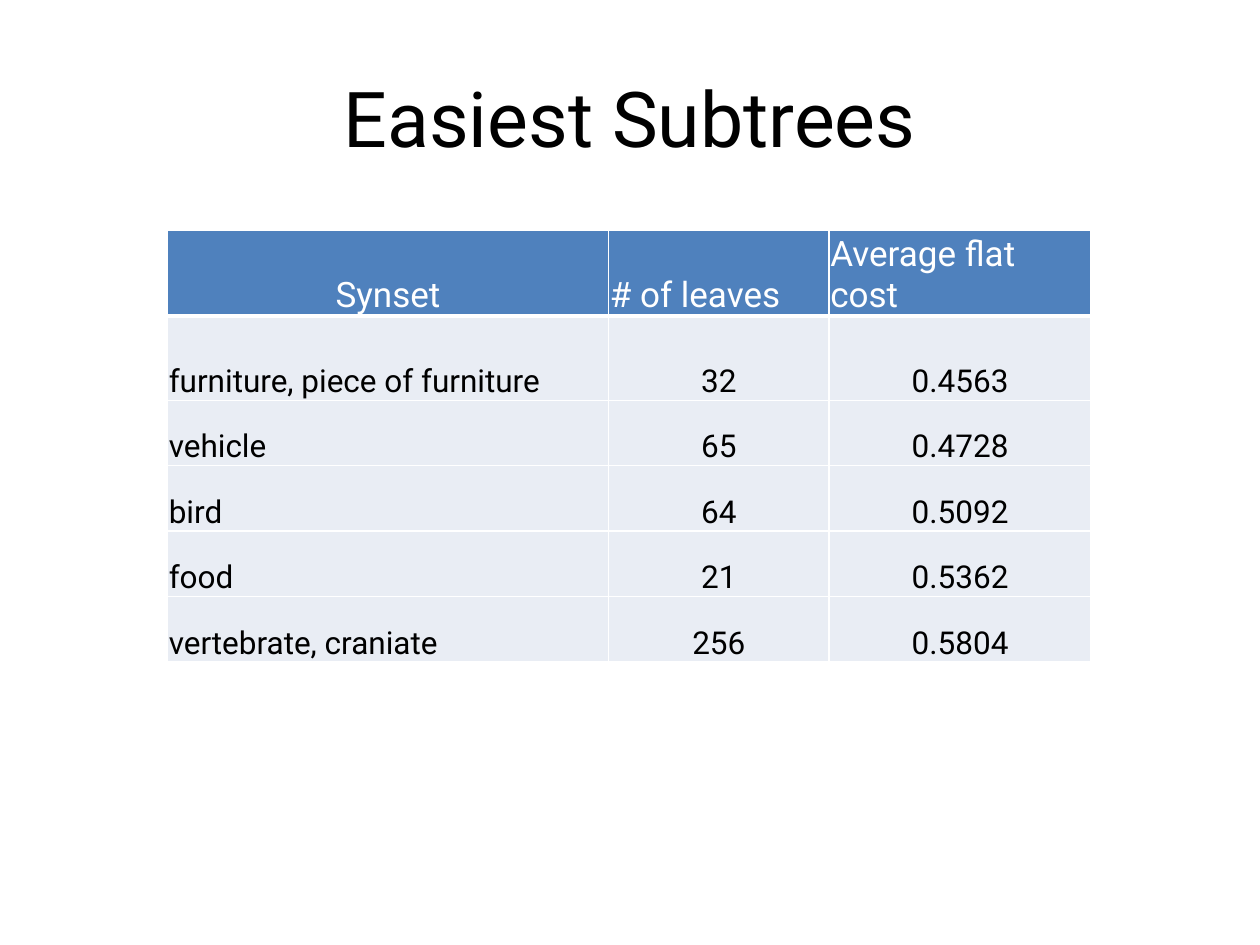
"""Build the slide that lists the easiest subtrees in a table."""
from pptx import Presentation
from pptx.dml.color import RGBColor
from pptx.enum.text import MSO_ANCHOR, PP_ALIGN
from pptx.oxml import parse_xml
from pptx.oxml.ns import nsdecls
from pptx.util import Inches, Pt

LEFT, CENTER = PP_ALIGN.LEFT, PP_ALIGN.CENTER
MIDDLE, BOTTOM = MSO_ANCHOR.MIDDLE, MSO_ANCHOR.BOTTOM
BLACK = RGBColor(0x00, 0x00, 0x00)
WHITE = RGBColor(0xFF, 0xFF, 0xFF)
BLUE = RGBColor(0x4F, 0x81, 0xBD)
PALE = RGBColor(0xE9, 0xED, 0xF4)
FONT = "Roboto"

ROWS = [
    ("Synset", "# of leaves", "Average flat cost"),
    ("furniture, piece of furniture", "32", "0.4563"),
    ("vehicle", "65", "0.4728"),
    ("bird", "64", "0.5092"),
    ("food", "21", "0.5362"),
    ("vertebrate, craniate", "256", "0.5804"),
]
WIDTHS = [3.5, 1.75, 2.08]
HEIGHTS = [0.67] * 2 + [0.52] * 4


def style(frame, size, color, align):
    para = frame.paragraphs[0]
    para.alignment = align
    font = para.runs[0].font
    font.name, font.size, font.bold = FONT, Pt(size), False
    font.color.rgb = color


def border(cell, side, width):
    cell._tc.get_or_add_tcPr().append(parse_xml(
        f'<a:ln{side} {nsdecls("a")} w="{Pt(width)}"><a:solidFill>'
        f'<a:srgbClr val="{WHITE}"/></a:solidFill></a:ln{side}>'))


deck = Presentation()
deck.slide_width, deck.slide_height = Inches(10), Inches(7.5)
slide = deck.slides.add_slide(deck.slide_layouts[6])

title = slide.shapes.add_textbox(Inches(0.5), Inches(0.3), Inches(9), Inches(1.25))
frame = title.text_frame
frame.word_wrap = True
frame.vertical_anchor = MIDDLE
frame.text = "Easiest Subtrees"
style(frame, 44, BLACK, CENTER)

table = slide.shapes.add_table(
    len(ROWS), len(WIDTHS), Inches(1.33), Inches(1.83),
    Inches(sum(WIDTHS)), Inches(sum(HEIGHTS))).table
for col, width in zip(table.columns, WIDTHS):
    col.width = Inches(width)
for row, height in zip(table.rows, HEIGHTS):
    row.height = Inches(height)

for r, texts in enumerate(ROWS):
    head = r == 0
    for c, text in enumerate(texts):
        cell = table.cell(r, c)
        cell.margin_left = cell.margin_right = cell.margin_top = Inches(0.01)
        cell.margin_bottom = Inches(0)
        cell.vertical_anchor = BOTTOM
        cell.text_frame.text = text
        align = CENTER if head == (c == 0) else LEFT
        style(cell.text_frame, 20 if head else 18, WHITE if head else BLACK, align)
        for side in "LR":
            border(cell, side, 1)
        border(cell, "T", 3 if r == 1 else 1)
        border(cell, "B", 3 if head else 1)
        cell.fill.solid()
        cell.fill.fore_color.rgb = BLUE if head else PALE

deck.save("out.pptx")
